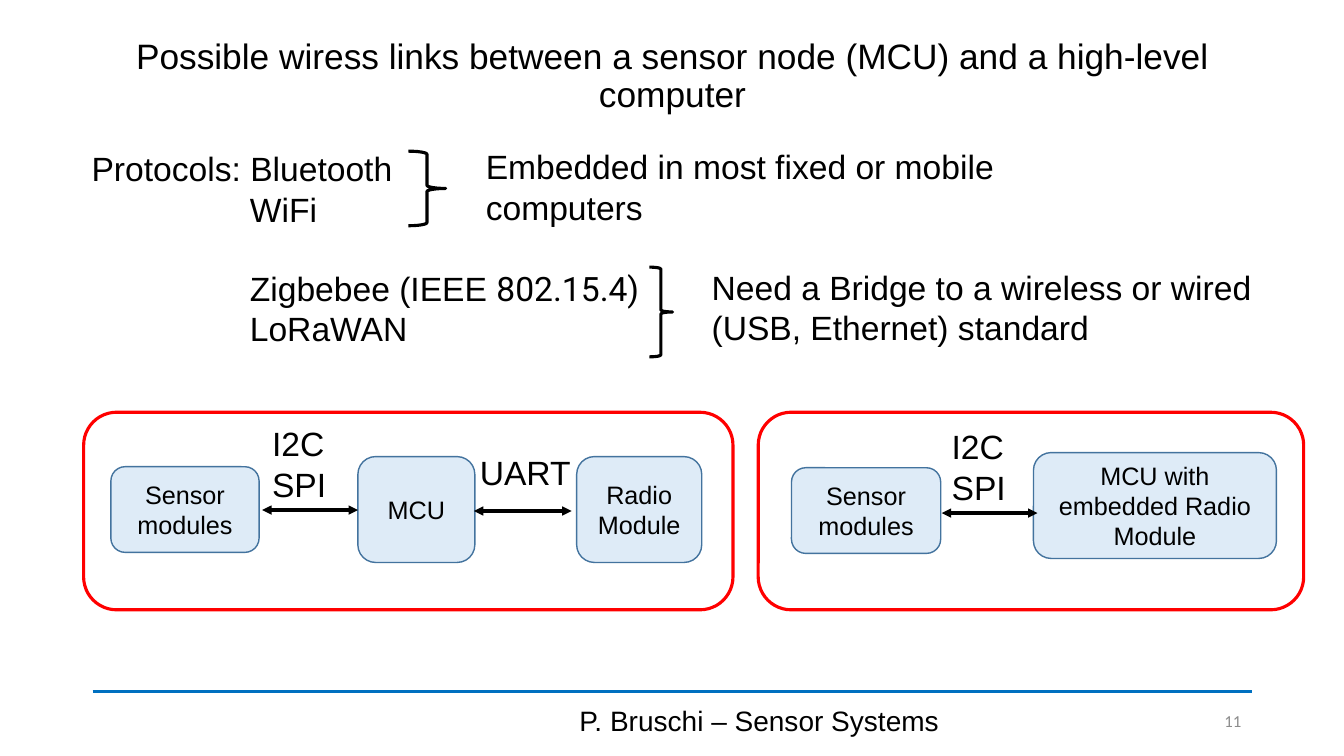
from dataclasses import dataclass

from lxml.etree import SubElement
from pptx import Presentation
from pptx.dml.color import RGBColor
from pptx.enum.shapes import MSO_CONNECTOR as LINE, MSO_SHAPE as SHAPE
from pptx.enum.text import MSO_ANCHOR as ANCHOR, PP_ALIGN as ALIGN
from pptx.oxml.ns import qn
from pptx.util import Pt

EMU_PER_PX = 9144  # 100 px to the inch


@dataclass(frozen=True)
class Theme:
    ink: str = "000000"
    muted: str = "8C8C8C"
    rule: str = "0070C0"
    panel: str = "FF0000"
    block: str = "DEEBF7"
    block_edge: str = "43739E"
    font: str = "Arial"
    number_font: str = "Calibri"
    standard_font: str = "Roboto"
    title: float = 25.2
    body: int = 24
    footer: int = 20
    small: int = 18
    number: int = 12
    stroke: float = 2.25
    thin: float = 1
    thick: float = 2.75


THEME = Theme()


def px(*lengths):
    return [length * EMU_PER_PX for length in lengths]


def within(box, part):
    """Move a part, given relative to the box, to its place on the slide."""
    return (box[0] + part[0], box[1] + part[1], *part[2:])


def add_run(paragraph, text, size=THEME.body, font=THEME.font, color=THEME.ink):
    run = paragraph.add_run()
    run.text = text
    for name, value in {"size": Pt(size), "name": font}.items():
        setattr(run.font, name, value)
    run.font.color.rgb = RGBColor.from_string(color)


def write(frame, text, align=ALIGN.LEFT, anchor=ANCHOR.TOP, wrap=True,
          spacing=None, **font_format):
    """Fill a text frame, one paragraph for each line of the text."""
    for name, value in {"word_wrap": wrap, "vertical_anchor": anchor}.items():
        setattr(frame, name, value)
    for index, line in enumerate(text.split("\n")):
        paragraph = frame.add_paragraph() if index else frame.paragraphs[0]
        for name, value in {"alignment": align, "line_spacing": spacing}.items():
            setattr(paragraph, name, value)
        add_run(paragraph, line, **font_format)


def add_text(slide, box, text, **text_format):
    write(slide.shapes.add_textbox(*px(*box)).text_frame, text, **text_format)


def add_outline(slide, kind, box, color, width, fill=None):
    shape = slide.shapes.add_shape(kind, *px(*box))
    shape.shadow.inherit = False
    if fill:
        shape.fill.solid()
        shape.fill.fore_color.rgb = RGBColor.from_string(fill)
    else:
        shape.fill.background()
    shape.line.color.rgb = RGBColor.from_string(color)
    shape.line.width = Pt(width)
    return shape


def add_line(slide, left, right, y, color, width, arrows=False):
    line = slide.shapes.add_connector(LINE.STRAIGHT, *px(left, y, right, y))
    line.line.color.rgb = RGBColor.from_string(color)
    line.line.width = Pt(width)
    if arrows:
        for end in ("a:headEnd", "a:tailEnd"):
            SubElement(line.line._get_or_add_ln(), qn(end), type="triangle")
    SubElement(line._element.spPr, qn("a:effectLst"))


def add_title(slide, box):
    add_text(slide, box,
             "Possible wiress links between a sensor node (MCU) and a high-level computer",
             align=ALIGN.CENTER, anchor=ANCHOR.MIDDLE, spacing=0.9, size=THEME.title)


def add_protocols(slide, box):
    """List the protocols, with a brace and a remark for each pair."""
    listing = slide.shapes.add_textbox(*px(*box)).text_frame
    write(listing, "Protocols: Bluetooth\nWiFi\nZigbebee (IEEE \nLoRaWAN")
    indented = listing.paragraphs[1:]
    for protocol in indented:
        protocol._p.get_or_add_pPr().set("marL", str(px(157)[0]))
    zigbee = indented[1]
    zigbee.space_before = Pt(28)
    add_run(zigbee, "802.15.4)", font=THEME.standard_font)

    for brace, remark_box, remark in (
        ((324, 8, 37, 74), (391, -2, 646, 91),
         "Embedded in most fixed or mobile computers"),
        ((563, 123, 23, 89), (615, 118, 630, 91),
         "Need a Bridge to a wireless or wired (USB, Ethernet) standard"),
    ):
        add_outline(slide, SHAPE.RIGHT_BRACE, within(box, brace), THEME.ink, THEME.stroke)
        add_text(slide, within(box, remark_box), remark)


def add_node(slide, box, blocks, buses):
    """Draw a sensor node: a red panel holding blocks joined by labelled buses."""
    for part, name in blocks:
        block = add_outline(slide, SHAPE.ROUNDED_RECTANGLE, within(box, part),
                            THEME.block_edge, THEME.thin, THEME.block)
        write(block.text_frame, name, align=ALIGN.CENTER, anchor=ANCHOR.MIDDLE,
              size=THEME.small)
    for (start, end, y), label_box, label in buses:
        add_line(slide, box[0] + start, box[0] + end, box[1] + y,
                 THEME.ink, THEME.stroke, arrows=True)
        add_text(slide, within(box, label_box), label, wrap=False)
    add_outline(slide, SHAPE.ROUNDED_RECTANGLE, box, THEME.panel, THEME.stroke)


def add_footer(slide, box):
    left, top, width, _ = box
    add_line(slide, left, left + width, top, THEME.rule, THEME.thick)
    add_text(slide, within(box, (350, 9, 622, 40)), "P. Bruschi – Sensor Systems",
             align=ALIGN.CENTER, anchor=ANCHOR.MIDDLE, size=THEME.footer)
    add_text(slide, within(box, (1053, 9, 96, 40)), "11", align=ALIGN.RIGHT,
             anchor=ANCHOR.MIDDLE, size=THEME.number, font=THEME.number_font,
             color=THEME.muted)


def main():
    deck = Presentation()
    deck.slide_width, deck.slide_height = px(1333, 750)
    slide = deck.slides.add_slide(deck.slide_layouts[6])

    add_footer(slide, (92, 686, 1150, 49))
    add_title(slide, (92, 40, 1150, 72))
    add_protocols(slide, (81, 142, 782, 212))
    add_node(
        slide, (83, 409, 644, 196),
        blocks=[((27, 54, 147, 85), "Sensor modules"),
                ((272, 44, 116, 105), "MCU"),
                ((489, 44, 124, 105), "Radio\nModule")],
        buses=[((177, 272, 97), (177, 6, 74, 91), "I2C\nSPI"),
               ((387, 484, 98), (383, 34, 111, 50), "UART")],
    )
    add_node(
        slide, (752, 409, 541, 196),
        blocks=[((33, 55, 148, 85), "Sensor modules"),
                ((273, 40, 241, 105), "MCU with embedded Radio Module")],
        buses=[((182, 277, 100), (182, 9, 74, 91), "I2C\nSPI")],
    )
    deck.save("out.pptx")


if __name__ == "__main__":
    main()
